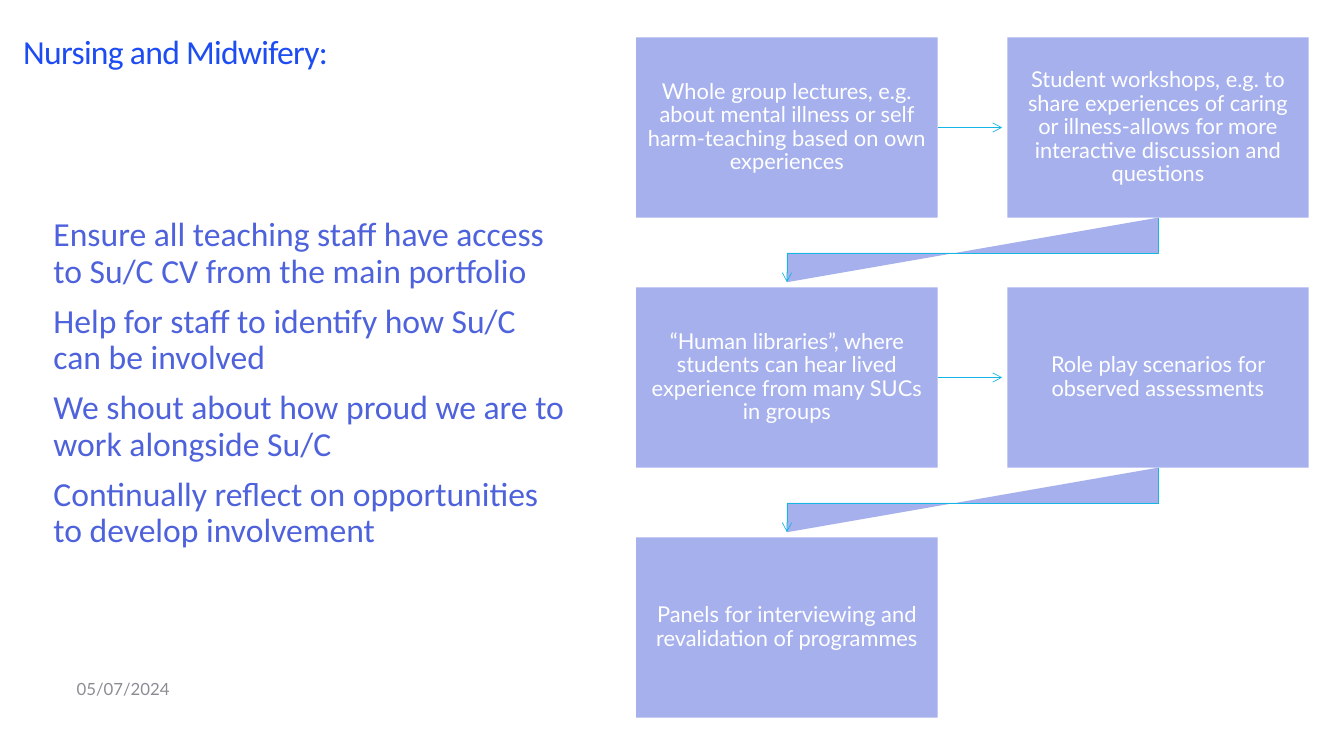
from lxml.etree import SubElement
from pptx import Presentation
from pptx.dml.color import RGBColor
from pptx.enum.shapes import MSO_CONNECTOR, MSO_SHAPE
from pptx.enum.text import MSO_ANCHOR, MSO_AUTO_SIZE, PP_ALIGN
from pptx.oxml.ns import qn
from pptx.util import Inches, Pt

TITLE_BLUE = RGBColor(0x1D, 0x4C, 0xF2)
BODY_BLUE = RGBColor(0x4E, 0x62, 0xDC)
BOX_LILAC = RGBColor(0xA6, 0xB0, 0xED)
ARROW_CYAN = RGBColor(0x16, 0xB6, 0xE4)
DATE_GREY = RGBColor(0x8C, 0x8C, 0x95)
WHITE = RGBColor(0xFF, 0xFF, 0xFF)

BOX_WIDTH, BOX_HEIGHT = 2.99, 1.79
COLUMN_STEP, ROW_STEP = 3.68, 2.48
ARROW_GAP = 0.05
ELBOW_DROP = 0.35

ACTIONS = [
    "Ensure all teaching staff have access to Su/C CV from the main portfolio",
    "Help for staff to identify how Su/C can be involved",
    "We shout about how proud we are to work alongside Su/C",
    "Continually reflect on opportunities to develop involvement",
]
STEPS = [
    "Whole group lectures, e.g. about mental illness or self harm-teaching "
    "based on own experiences",
    "Student workshops, e.g. to share experiences of caring or "
    "illness-allows for more interactive discussion and questions",
    "“Human libraries”, where students can hear lived experience from many "
    "SUCs in groups",
    "Role play scenarios for observed assessments",
    "Panels for interviewing and revalidation of programmes",
]


def place(shape, left, top, width, height):
    shape.left, shape.top = Inches(left), Inches(top)
    shape.width, shape.height = Inches(width), Inches(height)


def set_frame(text_frame, anchor, side=0, edge=0):
    text_frame.word_wrap = True
    text_frame.auto_size = MSO_AUTO_SIZE.NONE
    text_frame.vertical_anchor = anchor
    text_frame.margin_left = text_frame.margin_right = Inches(side)
    text_frame.margin_top = text_frame.margin_bottom = Inches(edge)


def format_runs(paragraph, font_name, size, color):
    for run in paragraph.runs:
        run.font.name = font_name
        run.font.size = Pt(size)
        run.font.color.rgb = color


def add_title(slide, left, top, width, height):
    title = slide.shapes.title
    place(title, left, top, width, height)
    set_frame(title.text_frame, MSO_ANCHOR.MIDDLE)
    title.text_frame.text = "Nursing and Midwifery:"
    paragraph = title.text_frame.paragraphs[0]
    paragraph.alignment = PP_ALIGN.LEFT
    paragraph.line_spacing = 0.9
    format_runs(paragraph, "Calibri", 24, TITLE_BLUE)
    paragraph.runs[0].font._element.set("spc", "-50")


def add_actions(slide, left, top, width, height):
    body = slide.placeholders[1]
    place(body, left, top, width, height)
    set_frame(body.text_frame, MSO_ANCHOR.TOP)
    body.text_frame.text = "\n".join(ACTIONS)
    for index, paragraph in enumerate(body.text_frame.paragraphs):
        properties = paragraph._p.get_or_add_pPr()
        properties.set("marL", "0")
        properties.set("indent", "0")
        SubElement(properties, qn("a:buNone"))
        paragraph.line_spacing = 0.9
        paragraph.space_before = Pt(10 if index else 0)
        format_runs(paragraph, "Calibri", 24, BODY_BLUE)


def add_date(slide, left, top, width, height):
    date = slide.shapes.add_textbox(*map(Inches, (left, top, width, height)))
    set_frame(date.text_frame, MSO_ANCHOR.MIDDLE)
    date.text_frame.text = "05/07/2024"
    format_runs(date.text_frame.paragraphs[0], "Lato", 12, DATE_GREY)


def style_arrow(shape):
    shape.line.color.rgb = ARROW_CYAN
    shape.line.width = Pt(0.5)
    SubElement(shape.line._get_or_add_ln(), qn("a:tailEnd"), type="arrow")


def add_straight_arrow(slide, left, top):
    """Point from the right edge of the box at left, top to its neighbour."""
    middle = top + BOX_HEIGHT / 2
    ends = (left + BOX_WIDTH, middle, left + COLUMN_STEP - ARROW_GAP, middle)
    arrow = slide.shapes.add_connector(MSO_CONNECTOR.STRAIGHT, *map(Inches, ends))
    style_arrow(arrow)
    SubElement(arrow._element.spPr, qn("a:effectLst"))


def add_elbow_arrow(slide, left, top):
    """Lead from the box at left, top to the first box of the next row."""
    start = left + BOX_WIDTH / 2
    end = start - COLUMN_STEP
    bottom = top + BOX_HEIGHT
    turn = bottom + ELBOW_DROP
    points = [(start, turn), (end, turn), (end, top + ROW_STEP - ARROW_GAP)]
    builder = slide.shapes.build_freeform(Inches(start), Inches(bottom))
    builder.add_line_segments(
        [(Inches(x), Inches(y)) for x, y in points], close=False)
    arrow = builder.convert_to_shape()
    arrow.shadow.inherit = False
    arrow.fill.solid()
    arrow.fill.fore_color.rgb = BOX_LILAC
    style_arrow(arrow)


def add_step(slide, text, left, top):
    box = slide.shapes.add_shape(
        MSO_SHAPE.RECTANGLE, *map(Inches, (left, top, BOX_WIDTH, BOX_HEIGHT)))
    box.shadow.inherit = False
    box.fill.solid()
    box.fill.fore_color.rgb = BOX_LILAC
    box.line.fill.background()
    set_frame(box.text_frame, MSO_ANCHOR.MIDDLE, 0.11, 0.12)
    box.text_frame.text = text
    paragraph = box.text_frame.paragraphs[0]
    paragraph.alignment = PP_ALIGN.CENTER
    paragraph.line_spacing = 0.9
    format_runs(paragraph, "Lato", 15.6, WHITE)


def add_step_flow(slide, left, top):
    for index, text in enumerate(STEPS):
        row, column = divmod(index, 2)
        box_left = left + column * COLUMN_STEP
        box_top = top + row * ROW_STEP
        if index < len(STEPS) - 1:
            add_arrow = add_elbow_arrow if column else add_straight_arrow
            add_arrow(slide, box_left, box_top)
        add_step(slide, text, box_left, box_top)


def main():
    presentation = Presentation()
    presentation.slide_width = Inches(13.33)
    presentation.slide_height = Inches(7.5)
    slide = presentation.slides.add_slide(presentation.slide_layouts[1])
    add_date(slide, 0.76, 6.63, 3, 0.4)
    add_actions(slide, 0.53, 2.16, 5.1, 3.95)
    add_title(slide, 0.23, 0.28, 12.78, 0.51)
    add_step_flow(slide, 6.31, 0.37)
    presentation.save("out.pptx")


if __name__ == "__main__":
    main()
